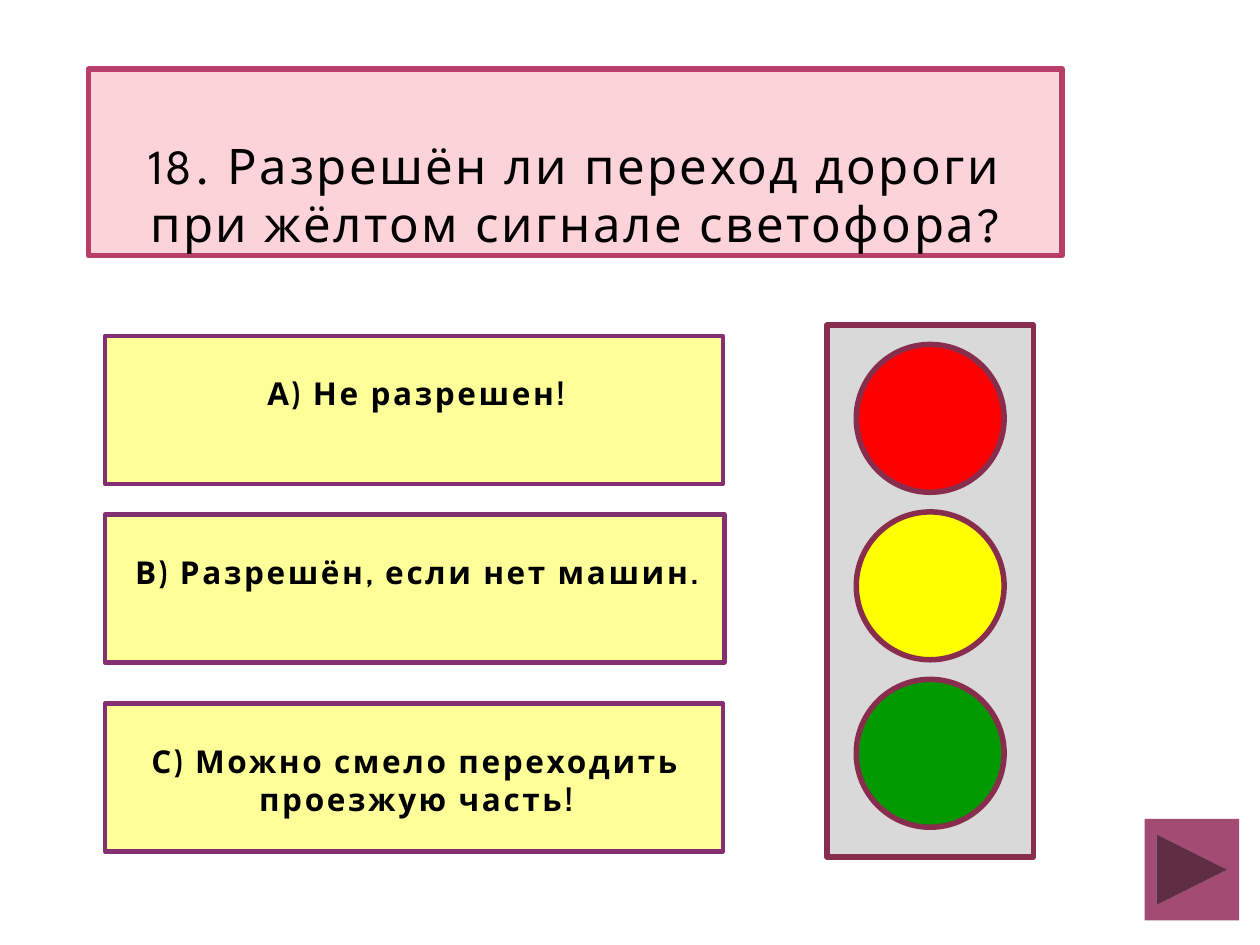
"""Build a quiz slide with a question, three answers and a traffic light."""
from pptx import Presentation
from pptx.dml.color import RGBColor
from pptx.enum.shapes import MSO_SHAPE
from pptx.enum.text import MSO_ANCHOR, PP_ALIGN
from pptx.util import Pt

RECT = MSO_SHAPE.RECTANGLE
OVAL = MSO_SHAPE.OVAL
NEXT = MSO_SHAPE.ACTION_BUTTON_FORWARD_OR_NEXT
TOP, BOTTOM = MSO_ANCHOR.TOP, MSO_ANCHOR.BOTTOM
CENTER = PP_ALIGN.CENTER

COLORS = {
    "pink": "FDD3DA", "rose": "B83D68", "cream": "FFFF99", "plum": "852F73",
    "gray": "D9D9D9", "wine": "882D4D", "red": "FF0000", "yellow": "FFFF00",
    "green": "009900", "mauve": "A34B73", "black": "000000",
}
ANSWERS = [
    (192, 353, "А) Не разрешен!"),
    (294, 354, "В) Разрешён, если нет машин."),
    (402, 353, "С) Можно смело переходить проезжую часть!"),
]


def color(name):
    return RGBColor.from_string(COLORS[name])


def add_form(slide, kind, box, fill, edge=None, width=3.15):
    form = slide.shapes.add_shape(kind, *map(Pt, box))
    form.shadow.inherit = False
    form.fill.solid()
    form.fill.fore_color.rgb = color(fill)
    if edge:
        form.line.color.rgb = color(edge)
        form.line.width = Pt(width)
    else:
        form.line.fill.background()
    return form


def add_text(form, text, font, size, pads, anchor, bold=False, pitch=None):
    frame = form.text_frame
    frame.word_wrap = True
    frame.vertical_anchor = anchor
    (frame.margin_left, frame.margin_top,
     frame.margin_right, frame.margin_bottom) = map(Pt, pads)
    para = frame.paragraphs[0]
    para.alignment = CENTER
    if pitch:
        para.line_spacing = Pt(pitch)
    run = para.add_run()
    run.text = text
    run.font.name = font
    run.font.size = Pt(size)
    run.font.bold = bold
    run.font.color.rgb = color("black")
    run._r.get_or_add_rPr().set("spc", "150")


def add_title(slide):
    form = add_form(slide, RECT, (50.5, 39.5, 556.5, 106.5), "pink", "rose")
    add_text(form, "18. Разрешён ли переход дороги при жёлтом сигнале светофора?",
             "League Spartan", 28, (3.6, 0, 3.6, 2), BOTTOM, pitch=33)


def add_answer(slide, top, width, text):
    form = add_form(slide, RECT, (60, top, width, 84.5), "cream", "plum", 2.5)
    add_text(form, text, "Cabin", 18, (9.4, 22, 7.2, 3.6), TOP, bold=True)


def add_light(slide):
    add_form(slide, RECT, (472.5, 185.75, 118, 304), "gray", "wine")
    for row, fill in enumerate(("red", "yellow", "green")):
        box = (489.3, 196.8 + row * 95.7, 84.5, 84.5)
        add_form(slide, OVAL, box, fill, "wine")


def main():
    deck = Presentation()
    deck.slide_width, deck.slide_height = Pt(720), Pt(540)
    slide = deck.slides.add_slide(deck.slide_layouts[6])
    add_title(slide)
    for answer in ANSWERS:
        add_answer(slide, *answer)
    add_light(slide)
    add_form(slide, NEXT, (654, 468, 54, 58), "mauve")
    deck.save("out.pptx")


if __name__ == "__main__":
    main()
